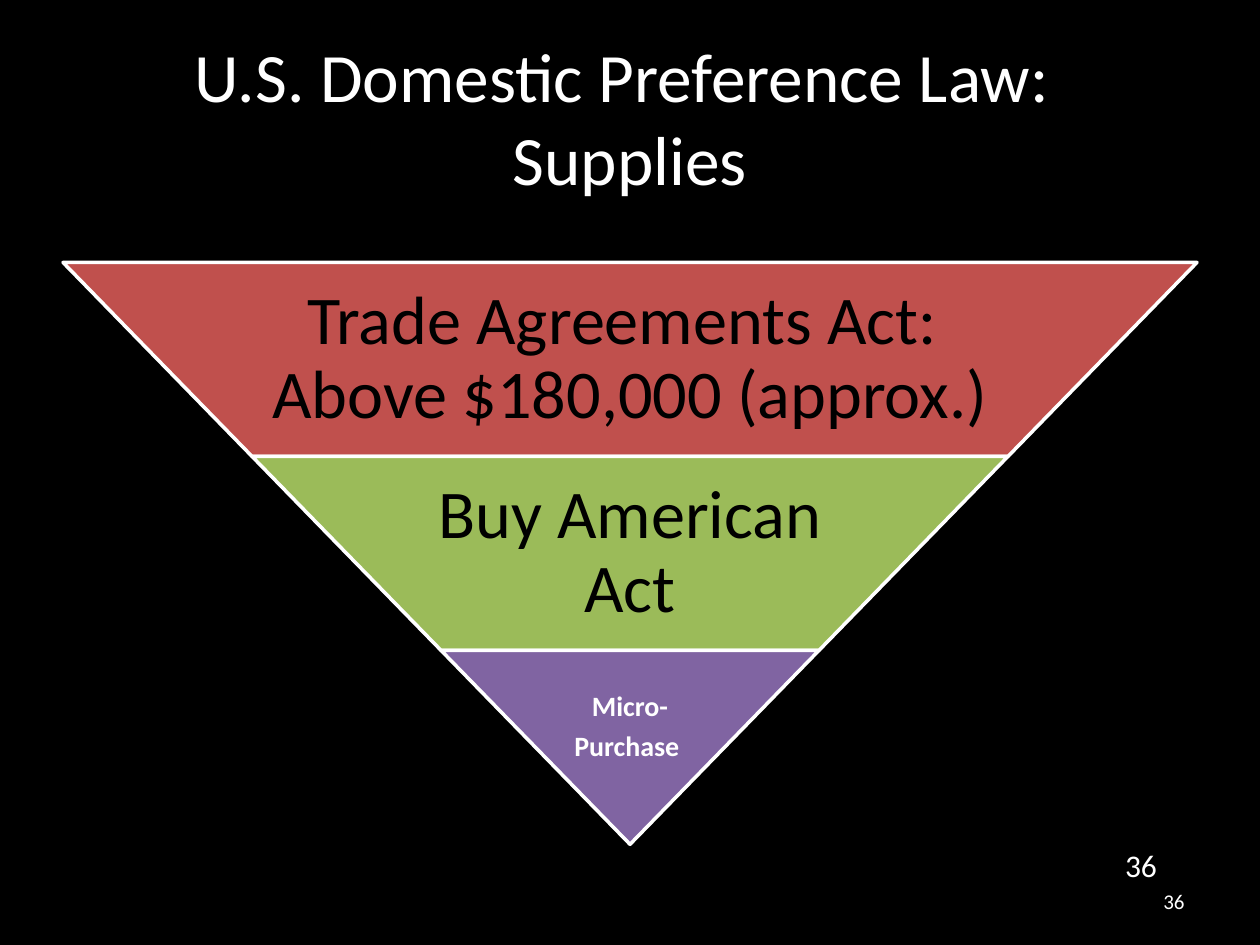
from dataclasses import dataclass

from pptx import Presentation
from pptx.dml.color import RGBColor
from pptx.enum.shapes import MSO_SHAPE
from pptx.enum.text import MSO_ANCHOR, PP_ALIGN
from pptx.slide import Slide
from pptx.util import Cm, Pt

FONT = "Calibri"
WHITE = "FFFFFF"
BLACK = "000000"
SLIDE_WIDTH = 25.4
TIER_COUNT = 3
TIER_HEIGHT = 3.91
PYRAMID_WIDTH = 22.86
PYRAMID_TOP = 5.29


@dataclass(frozen=True)
class Label:
    text: str
    left: float
    top: float
    width: float
    height: float
    size: float
    color: str = WHITE
    align: PP_ALIGN = PP_ALIGN.CENTER
    anchor: MSO_ANCHOR = MSO_ANCHOR.MIDDLE
    bold: bool = False
    line_spacing: float = 1.0
    space_after: float = 0
    inset: float | None = None
    bottom_inset: float | None = None


@dataclass(frozen=True)
class Tier:
    text: str
    fill: str
    text_width: float
    size: float
    color: str = BLACK
    bold: bool = False
    inset: float = 0.13
    bottom_inset: float = 0.13


TIERS = [
    Tier("Trade Agreements Act: \vAbove $180,000 (approx.)", "C0504D", 14.86, 39),
    Tier("Buy American Act", "9BBB59", 9.9, 39),
    Tier("Micro-\nPurchase ", "8064A2", 7.62, 16, WHITE, True, 0.05, 0.86),
]
LABELS = [
    Label("36", 22.43, 16.94, 2.54, 1.02, 18,
          align=PP_ALIGN.LEFT, anchor=MSO_ANCHOR.TOP),
    Label("U.S. Domestic Preference Law: \vSupplies",
          1.27, 0.76, PYRAMID_WIDTH, 3.18, 39.6),
    Label("36", 18.2, 17.65, 5.93, 1.02, 12, align=PP_ALIGN.RIGHT),
]


def rgb(color: str) -> RGBColor:
    return RGBColor.from_string(color)


def add_label(slide: Slide, label: Label) -> None:
    shape = slide.shapes.add_textbox(
        Cm(label.left), Cm(label.top), Cm(label.width), Cm(label.height))
    text_frame = shape.text_frame
    text_frame.word_wrap = True
    text_frame.vertical_anchor = label.anchor
    if label.inset is not None:
        text_frame.margin_left = text_frame.margin_right = Cm(label.inset)
        text_frame.margin_top = Cm(label.inset)
        text_frame.margin_bottom = Cm(label.bottom_inset)
    text_frame.text = label.text
    for paragraph in text_frame.paragraphs:
        paragraph.alignment = label.align
        paragraph.line_spacing = label.line_spacing
        paragraph.space_after = Pt(label.space_after)
        for run in paragraph.runs:
            run.font.name = FONT
            run.font.size = Pt(label.size)
            run.font.bold = label.bold
            run.font.color.rgb = rgb(label.color)


def add_tier(slide: Slide, tier: Tier, index: int) -> None:
    width = PYRAMID_WIDTH * (TIER_COUNT - index) / TIER_COUNT
    top = PYRAMID_TOP + index * TIER_HEIGHT
    shape = slide.shapes.add_shape(
        MSO_SHAPE.TRAPEZOID, Cm((SLIDE_WIDTH - width) / 2), Cm(top),
        Cm(width), Cm(TIER_HEIGHT))
    shape.rotation = 180
    shape.adjustments[0] = PYRAMID_WIDTH / (2 * TIER_COUNT) / TIER_HEIGHT
    shape.shadow.inherit = False
    shape.fill.solid()
    shape.fill.fore_color.rgb = rgb(tier.fill)
    shape.line.color.rgb = rgb(WHITE)
    shape.line.width = Pt(2)
    add_label(slide, Label(
        tier.text, (SLIDE_WIDTH - tier.text_width) / 2, top,
        tier.text_width, TIER_HEIGHT, tier.size, tier.color,
        bold=tier.bold, line_spacing=0.9, space_after=tier.size * 0.35,
        inset=tier.inset, bottom_inset=tier.bottom_inset))


def main() -> None:
    """Build the slide on domestic preference law for supplies."""
    presentation = Presentation()
    presentation.slide_width = Cm(SLIDE_WIDTH)
    presentation.slide_height = Cm(19.05)
    slide = presentation.slides.add_slide(presentation.slide_layouts[6])
    slide.background.fill.solid()
    slide.background.fill.fore_color.rgb = rgb(BLACK)
    for label in LABELS:
        add_label(slide, label)
    for index, tier in enumerate(TIERS):
        add_tier(slide, tier, index)
    presentation.save("out.pptx")


if __name__ == "__main__":
    main()
